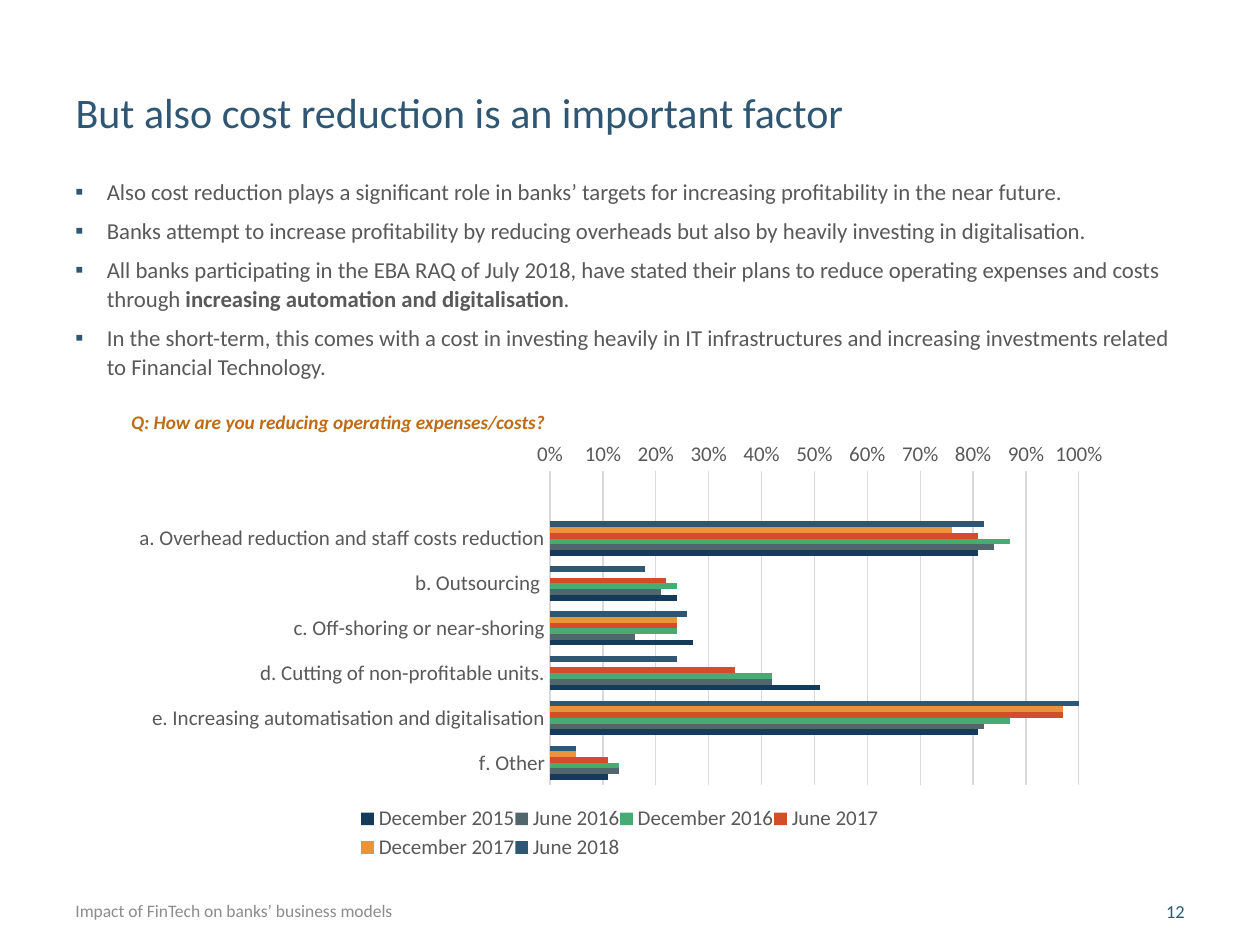
from lxml import etree
from pptx import Presentation
from pptx.chart.data import CategoryChartData
from pptx.dml.color import RGBColor
from pptx.enum.chart import XL_CHART_TYPE, XL_LEGEND_POSITION, XL_TICK_MARK
from pptx.enum.shapes import MSO_SHAPE
from pptx.enum.text import MSO_ANCHOR, PP_ALIGN
from pptx.oxml.ns import qn
from pptx.util import Inches, Pt

BAR_CLUSTERED = XL_CHART_TYPE.BAR_CLUSTERED
LEGEND_BOTTOM = XL_LEGEND_POSITION.BOTTOM
NO_TICK = XL_TICK_MARK.NONE
RECTANGLE = MSO_SHAPE.RECTANGLE
TOP, MIDDLE = MSO_ANCHOR.TOP, MSO_ANCHOR.MIDDLE
LEFT, RIGHT = PP_ALIGN.LEFT, PP_ALIGN.RIGHT

FONT = "Calibri"
NAVY = "2F5773"
GRAY = "595959"
LIGHT_GRAY = "D9D9D9"

BULLETS = [
    [("Also cost reduction plays a significant role in banks’ targets for increasing "
      "profitability in the near future.", False)],
    [("Banks attempt to increase profitability by reducing overheads but also by "
      "heavily investing in digitalisation.", False)],
    [("All banks participating in the EBA RAQ of July 2018, have stated their plans to "
      "reduce operating expenses and costs through ", False),
     ("increasing automation and digitalisation", True),
     (".", False)],
    [("In the short-term, this comes with a cost in investing heavily in IT "
      "infrastructures and increasing investments related to Financial Technology.", False)],
]

CATEGORIES = [
    "",
    "a. Overhead reduction and staff costs reduction",
    "b. Outsourcing ",
    "c. Off-shoring or near-shoring",
    "d. Cutting of non-profitable units.",
    "e. Increasing automatisation and digitalisation",
    "f. Other",
]

SERIES = [
    ("June 2018", NAVY, [None, 0.82, 0.18, 0.26, 0.24, 1, 0.05]),
    ("December 2017", "EA933B", [None, 0.76, 0, 0.24, 0, 0.97, 0.05]),
    ("June 2017", "D44D2A", [None, 0.81, 0.22, 0.24, 0.35, 0.97, 0.11]),
    ("December 2016", "49AB74", [None, 0.87, 0.24, 0.24, 0.42, 0.87, 0.13]),
    ("June 2016", "52666E", [None, 0.84, 0.21, 0.16, 0.42, 0.82, 0.13]),
    ("December 2015", "163A5A", [None, 0.81, 0.24, 0.27, 0.51, 0.81, 0.11]),
]


def color(value):
    return RGBColor.from_string(value)


def format_font(font, size, fill, bold=False, italic=False):
    font.name = FONT
    font.size = Pt(size)
    font.color.rgb = color(fill)
    font.bold = bold
    font.italic = italic


def place(shape, left, top, width, height):
    shape.left, shape.top = Inches(left), Inches(top)
    shape.width, shape.height = Inches(width), Inches(height)


def write_text(shape, text, size=12, fill=GRAY, bold=False, italic=False,
               align=LEFT, anchor=TOP):
    frame = shape.text_frame
    frame.word_wrap = True
    frame.vertical_anchor = anchor
    paragraph = frame.paragraphs[0]
    paragraph.alignment = align
    run = paragraph.add_run()
    run.text = text
    format_font(run.font, size, fill, bold, italic)


def add_text(slide, position, text, **text_format):
    box = slide.shapes.add_textbox(*map(Inches, position))
    write_text(box, text, **text_format)


def add_title(slide, text):
    title = slide.shapes.title
    place(title, 0.5, 0.64, 7.95, 0.61)
    write_text(title, text, size=24, fill=NAVY)


def add_bullet_mark(paragraph):
    properties = paragraph._p.get_or_add_pPr()
    properties.set("marL", str(Inches(0.25)))
    properties.set("indent", str(-Inches(0.25)))
    bullet_color = etree.SubElement(properties, qn("a:buClr"))
    etree.SubElement(bullet_color, qn("a:srgbClr"), val=NAVY)
    etree.SubElement(properties, qn("a:buFont"), typeface=FONT)
    etree.SubElement(properties, qn("a:buChar"), char="▪")


def add_bullets(slide, position, items):
    frame = slide.shapes.add_textbox(*map(Inches, position)).text_frame
    frame.word_wrap = True
    for index, item in enumerate(items):
        paragraph = frame.add_paragraph() if index else frame.paragraphs[0]
        add_bullet_mark(paragraph)
        paragraph.level = 1
        paragraph.line_spacing = 1.05
        paragraph.space_before = Pt(6 if index else 0)
        for text, bold in item:
            run = paragraph.add_run()
            run.text = text
            format_font(run.font, 13, GRAY, bold)


def make_layout(x, y, w, h, inner=False):
    layout = etree.Element(qn("c:layout"))
    manual = etree.SubElement(layout, qn("c:manualLayout"))
    if inner:
        etree.SubElement(manual, qn("c:layoutTarget"), val="inner")
    for name in ("xMode", "yMode"):
        etree.SubElement(manual, qn(f"c:{name}"), val="edge")
    for name, value in (("x", x), ("y", y), ("w", w), ("h", h)):
        etree.SubElement(manual, qn(f"c:{name}"), val=str(value))
    return layout


def replace_layout(parent, index, layout):
    for old in parent.findall(qn("c:layout")):
        parent.remove(old)
    parent.insert(index, layout)


def format_axes(chart):
    category_axis, value_axis = chart.category_axis, chart.value_axis
    for axis in (category_axis, value_axis):
        axis.major_tick_mark = axis.minor_tick_mark = NO_TICK
        format_font(axis.tick_labels.font, 12, GRAY)
    category_axis.reverse_order = True
    value_axis.minimum_scale, value_axis.maximum_scale = 0, 1
    value_axis.major_unit = 0.1
    value_axis.tick_labels.number_format = "0%"
    value_axis.tick_labels.number_format_is_linked = False
    value_axis.format.line.fill.background()
    for line in (category_axis.format.line, value_axis.major_gridlines.format.line):
        line.color.rgb = color(LIGHT_GRAY)
        line.width = Pt(0.75)


def add_cost_chart(slide, position):
    data = CategoryChartData(number_format="0%")
    data.categories = CATEGORIES
    for name, _, values in SERIES:
        data.add_series(name, values)
    chart = slide.shapes.add_chart(BAR_CLUSTERED, *map(Inches, position), data).chart
    chart.has_title = False
    format_font(chart.font, 10, "000000")
    plot = chart.plots[0]
    plot.gap_width = 182
    plot.vary_by_categories = False
    for series, (_, fill, _) in zip(plot.series, SERIES):
        series.format.fill.solid()
        series.format.fill.fore_color.rgb = color(fill)
    format_axes(chart)
    chart.has_legend = True
    legend = chart.legend
    legend.position = LEGEND_BOTTOM
    legend.include_in_layout = False
    format_font(legend.font, 12, GRAY)
    replace_layout(chart._chartSpace.chart.plotArea, 0,
                   make_layout(0.43, 0.09, 0.53, 0.72, inner=True))
    replace_layout(legend._element, 1, make_layout(0.24, 0.85, 0.52, 0.14))


def add_question(slide, position, text):
    shape = slide.shapes.add_shape(RECTANGLE, *map(Inches, position))
    shape.shadow.inherit = False
    shape.fill.solid()
    shape.fill.fore_color.rgb = color("FFFFFF")
    shape.line.fill.background()
    frame = shape.text_frame
    frame.margin_left, frame.margin_right = Inches(0.08), 0
    write_text(shape, text, size=11, fill="BF6B14", bold=True, italic=True, anchor=MIDDLE)


def main():
    presentation = Presentation()
    presentation.slide_width, presentation.slide_height = Inches(10), Inches(7.5)
    slide = presentation.slides.add_slide(presentation.slide_layouts[5])
    add_title(slide, "But also cost reduction is an important factor")
    add_text(slide, (8.65, 7.11, 0.85, 0.24), "12", size=10.5, fill=NAVY,
             align=RIGHT, anchor=MIDDLE)
    add_text(slide, (0.5, 7.11, 5.38, 0.24), "Impact of FinTech on banks’ business models",
             size=10, fill="8C8C8C", anchor=MIDDLE)
    add_cost_chart(slide, (0.96, 3.43, 7.92, 3.46))
    add_bullets(slide, (0.5, 1.35, 9, 1.72), BULLETS)
    add_question(slide, (0.96, 3.22, 4.61, 0.26),
                 "Q: How are you reducing operating expenses/costs?")
    presentation.save("out.pptx")


if __name__ == "__main__":
    main()
